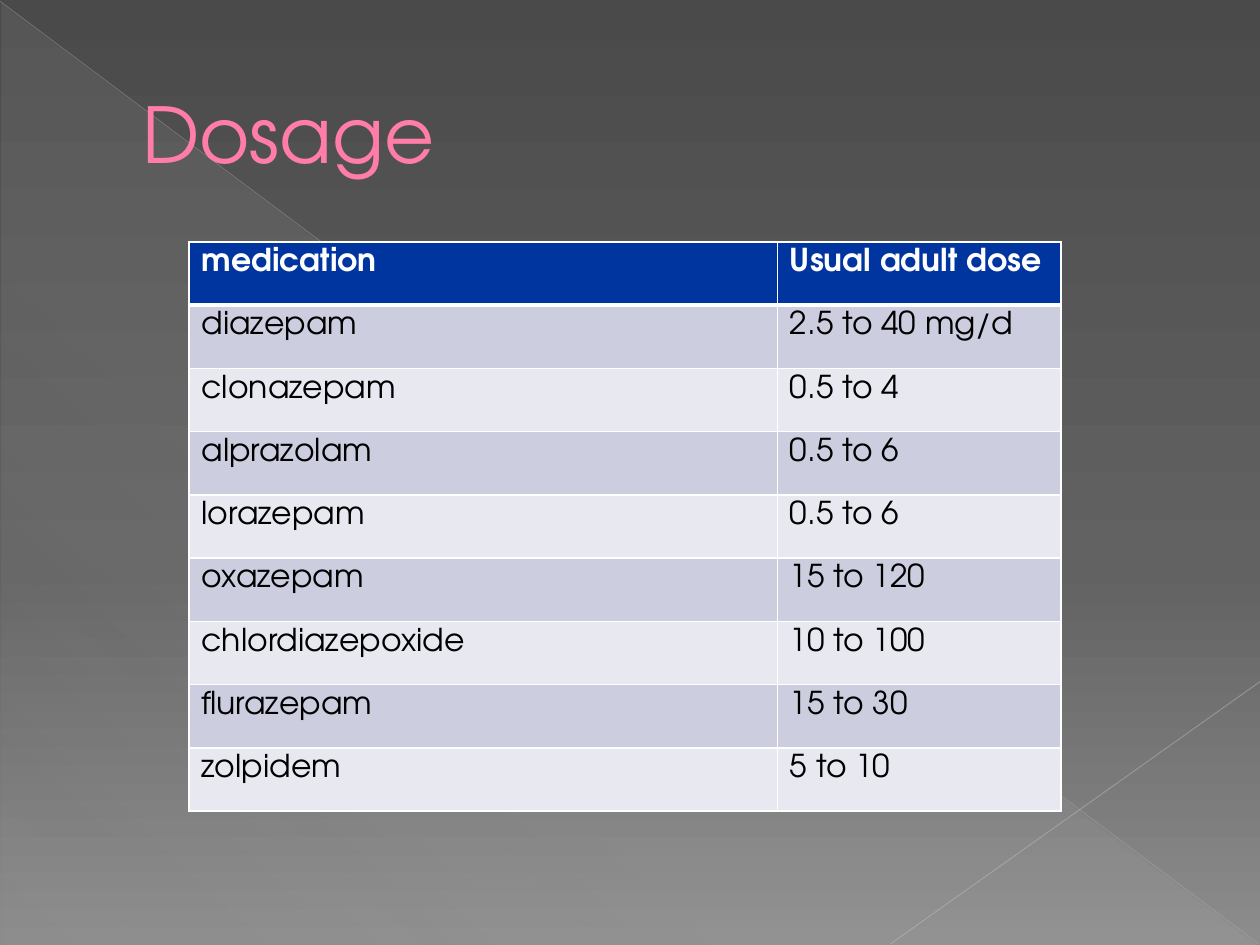
from lxml import etree
from pptx import Presentation
from pptx.dml.color import RGBColor
from pptx.enum.shapes import MSO_CONNECTOR, MSO_SHAPE
from pptx.enum.text import MSO_ANCHOR
from pptx.oxml import parse_xml
from pptx.oxml.ns import nsdecls, qn
from pptx.util import Inches, Pt

STRAIGHT = MSO_CONNECTOR.STRAIGHT
RIGHT_TRIANGLE = MSO_SHAPE.RIGHT_TRIANGLE
MIDDLE = MSO_ANCHOR.MIDDLE

FONT = "TeX Gyre Adventor"
PINK = RGBColor(0xFF, 0x7D, 0xA7)
CRIMSON = RGBColor(0xB1, 0x27, 0x61)
BLUE = RGBColor(0x00, 0x34, 0x9E)
LAVENDER = RGBColor(0xCC, 0xCE, 0xDF)
PALE = RGBColor(0xE7, 0xE8, 0xF0)
WHITE = RGBColor(0xFF, 0xFF, 0xFF)
BLACK = RGBColor(0x00, 0x00, 0x00)
DARK = RGBColor(0x4A, 0x4A, 0x4A)
MID = RGBColor(0x62, 0x62, 0x62)
LIGHT = RGBColor(0x8C, 0x8C, 0x8C)
SILVER = RGBColor(0xD2, 0xD2, 0xD2)
LINE_GRAY = RGBColor(0xBF, 0xBF, 0xBF)
LINE_SILVER = RGBColor(0xC6, 0xC6, 0xC6)

TITLE = "Dosage"
ROWS = [
    ("medication", "Usual adult dose"),
    ("diazepam", "2.5 to 40 mg/d"),
    ("clonazepam", "0.5 to 4"),
    ("alprazolam", "0.5 to 6"),
    ("lorazepam", "0.5 to 6"),
    ("oxazepam", "15 to 120"),
    ("chlordiazepoxide", "10 to 100"),
    ("flurazepam", "15 to 30"),
    ("zolpidem", "5 to 10"),
]
COL_WIDTHS = (4.67, 2.25)
TABLE_HEIGHT = 4.52
BACKGROUND_STOPS = [(0, DARK, 100), (60, MID, 100), (100, LIGHT, 100)]
TRIANGLE_STOPS = [(0, SILVER, 10), (70, SILVER, 8), (100, SILVER, 1)]
DIAGONALS = [
    ((0, 0.01), (9.99, 7.49), LINE_GRAY, 0.39, 35),
    ((10, 5.41), (7.07, 7.49), LINE_SILVER, 0.47, 45),
]


def set_gradient(fill, parent, stops, angle):
    fill.gradient()
    old = parent.find(".//" + qn("a:gradFill"))
    gs = "".join(
        f'<a:gs pos="{pos * 1000}"><a:srgbClr val="{color}">'
        f'<a:alpha val="{alpha * 1000}"/></a:srgbClr></a:gs>'
        for pos, color, alpha in stops
    )
    new = parse_xml(
        f'<a:gradFill {nsdecls("a")} rotWithShape="1"><a:gsLst>{gs}</a:gsLst>'
        f'<a:lin ang="{angle * 60000}" scaled="0"/></a:gradFill>'
    )
    old.getparent().replace(old, new)


def outline(tag, color, width):
    return parse_xml(
        f'<a:{tag} {nsdecls("a")} w="{Pt(width)}"><a:solidFill>'
        f'<a:srgbClr val="{color}"/></a:solidFill></a:{tag}>'
    )


def add_diagonal(slide, start, end, color, width, alpha):
    line = slide.shapes.add_connector(STRAIGHT, *map(Inches, start + end))
    line.line.color.rgb = color
    line.line.width = Pt(width)
    sp_pr = line._element.spPr
    clr = sp_pr.find(".//" + qn("a:srgbClr"))
    etree.SubElement(clr, qn("a:alpha"), val=str(alpha * 1000))
    etree.SubElement(sp_pr, qn("a:effectLst"))


def style_run(r, size, color, bold=False):
    r.font.name = FONT
    r.font.size = Pt(size)
    r.font.bold = bold
    r.font.color.rgb = color


def add_title(slide):
    box = slide.shapes.add_textbox(*map(Inches, (0.5, 0.29, 9, 1.53)))
    tf = box.text_frame
    tf.word_wrap = True
    tf.vertical_anchor = MIDDLE
    tf.text = TITLE
    p = tf.paragraphs[0]
    p._p.get_or_add_pPr().set("marL", str(Inches(0.53)))
    r = p.runs[0]
    style_run(r, 44, PINK)
    r._r.get_or_add_rPr().insert(0, outline("ln", CRIMSON, 0.5))


def add_dosage_table(slide):
    frame = slide.shapes.add_table(
        len(ROWS), len(COL_WIDTHS), Inches(1.5), Inches(1.92),
        Inches(sum(COL_WIDTHS)), Inches(TABLE_HEIGHT))
    table = frame.table
    for col, width in zip(table.columns, COL_WIDTHS):
        col.width = Inches(width)
    for i, values in enumerate(ROWS):
        header = i == 0
        fill = BLUE if header else LAVENDER if i % 2 else PALE
        widths = {"lnL": 1, "lnR": 1, "lnT": 3 if i == 1 else 1, "lnB": 3 if header else 1}
        for j, value in enumerate(values):
            cell = table.cell(i, j)
            cell.text = value
            style_run(cell.text_frame.paragraphs[0].runs[0], 18,
                      WHITE if header else BLACK, header)
            cell.fill.solid()
            cell.fill.fore_color.rgb = fill
            tc_pr = cell._tc.get_or_add_tcPr()
            for k, (tag, width) in enumerate(widths.items()):
                tc_pr.insert(k, outline(tag, WHITE, width))


def main():
    prs = Presentation()
    prs.slide_width, prs.slide_height = Inches(10), Inches(7.5)
    s = prs.slides.add_slide(prs.slide_layouts[6])
    set_gradient(s.background.fill, s._element, BACKGROUND_STOPS, 90)

    sp = s.shapes.add_shape(RIGHT_TRIANGLE, *map(Inches, (0.01, 0.02, 9.98, 7.48)))
    sp.shadow.inherit = False
    sp.line.fill.background()
    set_gradient(sp.fill, sp._element, TRIANGLE_STOPS, 133)

    for diagonal in DIAGONALS:
        add_diagonal(s, *diagonal)
    add_title(s)
    add_dosage_table(s)
    prs.save("out.pptx")


if __name__ == "__main__":
    main()
